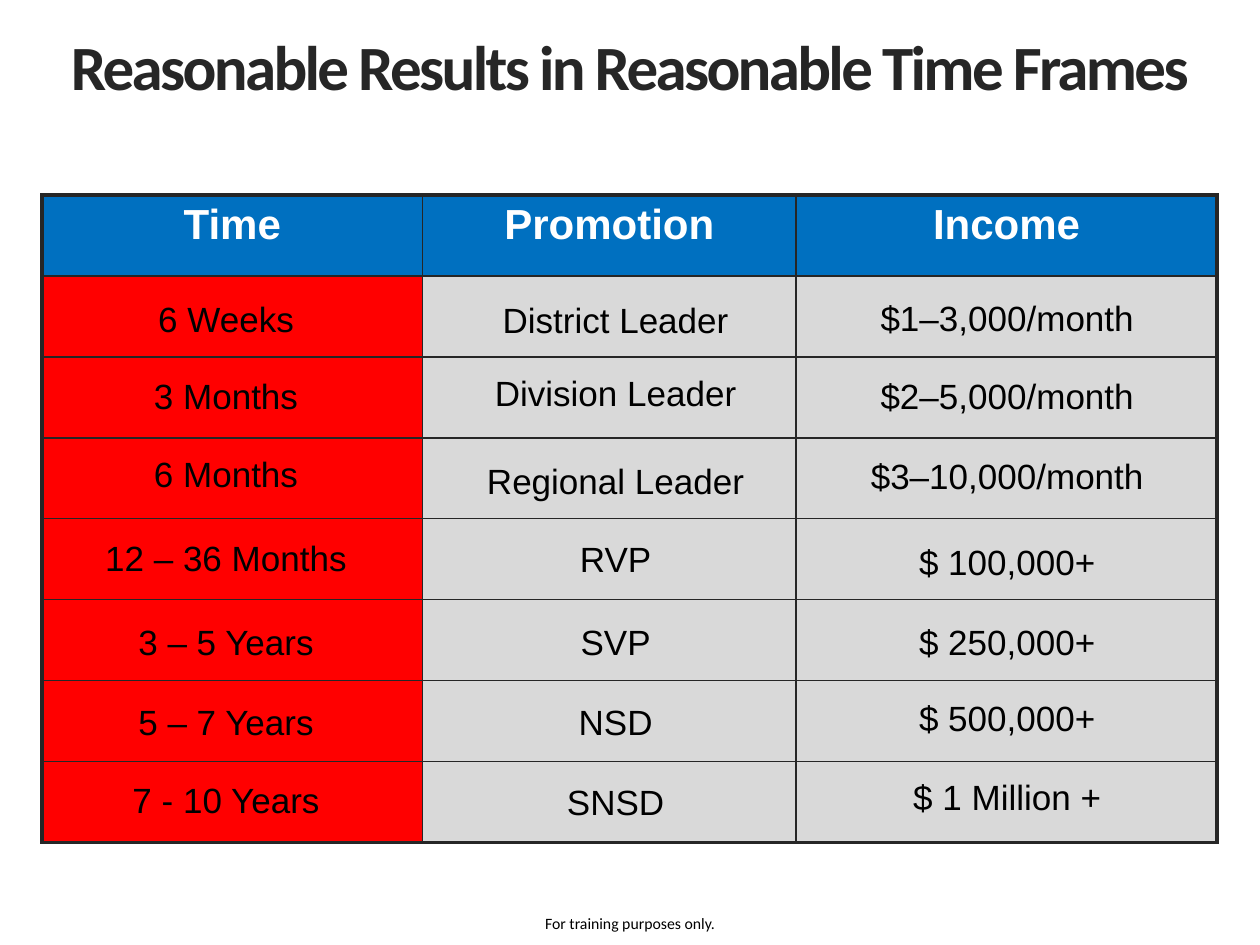
from lxml.etree import SubElement
from pptx import Presentation
from pptx.dml.color import RGBColor
from pptx.enum.text import MSO_ANCHOR, MSO_AUTO_SIZE, PP_ALIGN
from pptx.oxml.ns import qn
from pptx.util import Pt

COLORS = {"ink": "262626", "header": "0070C0", "time": "FF0000",
          "cell": "D9D9D9", "white": "FFFFFF", "black": "000000"}

TITLE = "Reasonable Results in Reasonable Time Frames"
FOOTER = "For training purposes only."
HEADERS = ["Time", "Promotion", "Income"]
COLUMN_FILLS = ["time", "cell", "cell"]
COLUMN_WIDTHS = [217.5, 213.5, 240.5]
LABEL_CENTERS = [129.2, 351.8, 575.6]
TABLE_LEFT, TABLE_TOP, ROW_HEIGHT = 24, 111.5, 46.25
LABEL_HEIGHT = 30.5

# Each label is text, top, width
LABELS = [
    [("6 Weeks", 165.5, 86), ("District Leader", 166.5, 138), ("$1–3,000/month", 165, 153)],
    [("3 Months", 210, 91), ("Division Leader", 208, 147), ("$2–5,000/month", 210, 153)],
    [("6 Months", 254.5, 91), ("Regional Leader", 258, 156), ("$3–10,000/month", 255.5, 165)],
    [("12 – 36 Months", 302, 147), ("RVP", 303, 50), ("$ 100,000+", 304.5, 109)],
    [("3 – 5 Years", 350, 109), ("SVP", 350, 49), ("$ 250,000+", 350, 109)],
    [("5 – 7 Years", 396, 109), ("NSD", 396, 51), ("$ 500,000+", 394, 109)],
    [("7 - 10 Years", 440.5, 116), ("SNSD", 441.5, 65), ("$ 1 Million +", 439, 117)],
]


def rgb(name):
    return RGBColor.from_string(COLORS[name])


def write(text_frame, text, size, font_name, color, bold=False):
    text_frame.text = text
    paragraph = text_frame.paragraphs[0]
    paragraph.alignment = PP_ALIGN.CENTER
    font = paragraph.runs[0].font
    font.size, font.name, font.bold = Pt(size), font_name, bold
    font.color.rgb = rgb(color)
    return paragraph.runs[0]


def set_frame(text_frame, margin, wrap):
    text_frame.margin_left = text_frame.margin_right = Pt(margin)
    text_frame.margin_top = text_frame.margin_bottom = Pt(margin)
    text_frame.vertical_anchor = MSO_ANCHOR.TOP
    text_frame.auto_size = MSO_AUTO_SIZE.NONE
    text_frame.word_wrap = wrap


def add_text(slide, text, left, top, width, height, size, font_name, margin, wrap):
    shape = slide.shapes.add_textbox(Pt(left), Pt(top), Pt(width), Pt(height))
    set_frame(shape.text_frame, margin, wrap)
    write(shape.text_frame, text, size, font_name, "black")


def style_cell(cell, fill, outer_sides):
    cell.margin_left = cell.margin_right = Pt(3.6)
    cell.margin_top = cell.margin_bottom = Pt(3.6)
    properties = cell._tc.get_or_add_tcPr()
    for side, is_outer in zip(("lnL", "lnR", "lnT", "lnB"), outer_sides):
        line = SubElement(properties, qn(f"a:{side}"), w=str(Pt(2.25 if is_outer else 1)))
        line_fill = SubElement(line, qn("a:solidFill"))
        SubElement(line_fill, qn("a:srgbClr"), val=COLORS["ink"])
    cell.fill.solid()
    cell.fill.fore_color.rgb = rgb(fill)


def add_results_table(slide):
    row_count, column_count = len(LABELS) + 1, len(HEADERS)
    table = slide.shapes.add_table(
        row_count, column_count, Pt(TABLE_LEFT), Pt(TABLE_TOP),
        Pt(sum(COLUMN_WIDTHS)), Pt(ROW_HEIGHT * row_count)).table
    for column, width in zip(table.columns, COLUMN_WIDTHS):
        column.width = Pt(width)
    for row_index, row in enumerate(table.rows):
        row.height = Pt(ROW_HEIGHT)
        for column_index, cell in enumerate(row.cells):
            fill = COLUMN_FILLS[column_index] if row_index else "header"
            style_cell(cell, fill, (column_index == 0, column_index == column_count - 1,
                                    row_index == 0, row_index == row_count - 1))
            if row_index == 0:
                write(cell.text_frame, HEADERS[column_index], 24, "Arial", "white", True)


def main():
    presentation = Presentation()
    presentation.slide_width, presentation.slide_height = Pt(720), Pt(540)
    slide = presentation.slides.add_slide(presentation.slide_layouts[5])

    title = slide.shapes.title
    title.left, title.top, title.width, title.height = Pt(0), Pt(16), Pt(720), Pt(84)
    set_frame(title.text_frame, 0, True)
    run = write(title.text_frame, TITLE, 36, "Calibri", "ink", True)
    run.font._element.set("spc", "-150")

    add_results_table(slide)
    for row in LABELS:
        for center, (text, top, width) in zip(LABEL_CENTERS, row):
            add_text(slide, text, center - width / 2, top, width, LABEL_HEIGHT,
                     20, "Arial", 4.3, False)
    add_text(slide, FOOTER, 0, 518.5, 720, 17.5, 9, "Calibri", 3.6, True)
    presentation.save("out.pptx")


if __name__ == "__main__":
    main()
